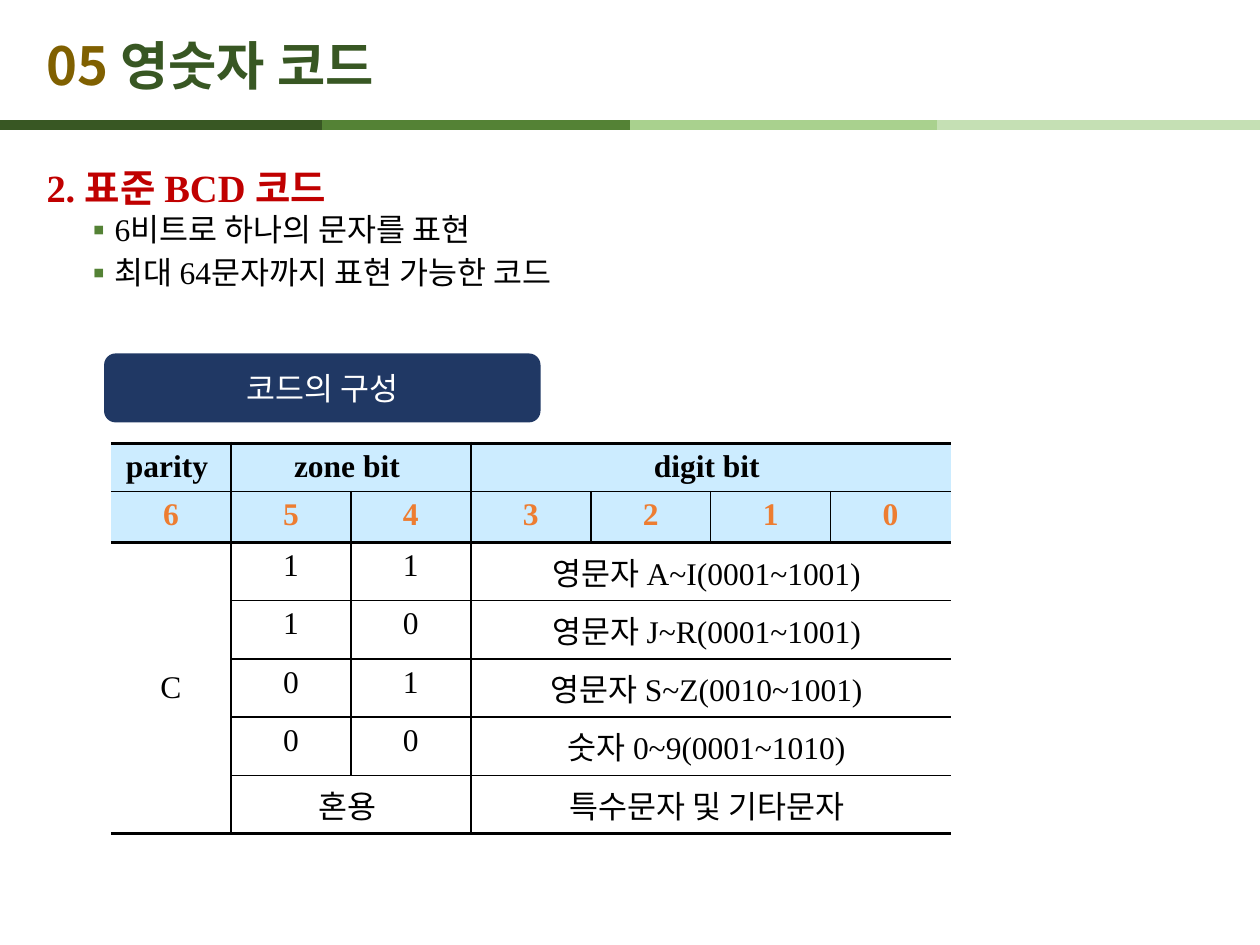
import pptx
import pptx.util
import pptx.dml.color
import pptx.enum.shapes
import pptx.enum.text
import pptx.oxml.ns
from lxml import etree

Pt = pptx.util.Pt
RGBColor = pptx.dml.color.RGBColor
qn = pptx.oxml.ns.qn
ALIGN = pptx.enum.text.PP_ALIGN
ANCHOR = pptx.enum.text.MSO_ANCHOR

BLACK = RGBColor(0, 0, 0)
WHITE = RGBColor(255, 255, 255)
GOLD = RGBColor(0x80, 0x60, 0x00)
DARK_GREEN = RGBColor(0x38, 0x57, 0x23)
GREEN = RGBColor(0x54, 0x82, 0x35)
LIGHT_GREEN = RGBColor(0xA9, 0xD1, 0x8E)
PALE_GREEN = RGBColor(0xC5, 0xE0, 0xB4)
RED = RGBColor(0xC0, 0, 0)
NAVY = RGBColor(0x20, 0x38, 0x64)
ORANGE = RGBColor(0xED, 0x7D, 0x31)
HEADER_BLUE = RGBColor(0xCC, 0xEC, 0xFF)
SANS, SERIF = "Noto Sans CJK KR", "Times New Roman"

TITLE = [("05 ", GOLD), ("영숫자 코드", DARK_GREEN)]
HEADING = "2. 표준 BCD 코드"
BULLETS = ["6비트로 하나의 문자를 표현", "최대 64문자까지 표현 가능한 코드"]
LABEL = "코드의 구성"
STRIPES = [(0, DARK_GREEN), (184.3, GREEN), (360, LIGHT_GREEN), (535.7, PALE_GREEN)]
STRIPE_W, STRIPE_Y = 184.3, 71.3

# row, column, row span, column span, text
CELLS = [
    (0, 0, 1, 1, "parity "), (0, 1, 1, 2, "zone bit "), (0, 3, 1, 4, "digit bit "),
    *[(1, c, 1, 1, str(6 - c)) for c in range(7)],
    (2, 0, 5, 1, "C"),
    (2, 1, 1, 1, "1"), (2, 2, 1, 1, "1"), (2, 3, 1, 4, "영문자 A~I(0001~1001) "),
    (3, 1, 1, 1, "1"), (3, 2, 1, 1, "0"), (3, 3, 1, 4, "영문자 J~R(0001~1001) "),
    (4, 1, 1, 1, "0"), (4, 2, 1, 1, "1"), (4, 3, 1, 4, "영문자 S~Z(0010~1001) "),
    (5, 1, 1, 1, "0"), (5, 2, 1, 1, "0"), (5, 3, 1, 4, "숫자 0~9(0001~1010) "),
    (6, 1, 1, 2, "혼용 "), (6, 3, 1, 4, "특수문자 및 기타문자 "),
]
ROW_HEIGHTS = [27.5, 29] + [33.3] * 5
COLS, COL_W = 7, 68.57
HEADER_ROWS = 2
THIN, THICK = 1, 2.25


def add_run(p, text, size, font, color, bold=False):
    r = p.add_run()
    r.text = text
    r.font.size, r.font.name, r.font.bold = Pt(size), font, bold
    r.font.color.rgb = color
    etree.SubElement(r._r.get_or_add_rPr(), qn("a:ea")).set("typeface", SANS)


def place(sp, left, top, width, height):
    sp.left, sp.top, sp.width, sp.height = Pt(left), Pt(top), Pt(width), Pt(height)


def set_bullet(p, char=None, color=None, left=0, indent=0):
    pPr = p._p.get_or_add_pPr()
    pPr.set("marL", str(Pt(left)))
    pPr.set("indent", str(Pt(indent)))
    if char is None:
        etree.SubElement(pPr, qn("a:buNone"))
        return
    clr = etree.SubElement(pPr, qn("a:buClr"))
    etree.SubElement(clr, qn("a:srgbClr")).set("val", str(color))
    etree.SubElement(pPr, qn("a:buFont")).set("typeface", SANS)
    etree.SubElement(pPr, qn("a:buChar")).set("char", char)


def set_borders(cell, widths):
    tcPr = cell._tc.get_or_add_tcPr()
    for i, (side, width) in enumerate(zip("LRTB", widths)):
        ln = etree.Element(qn("a:ln" + side), w=str(Pt(width)))
        if width:
            fill = etree.SubElement(ln, qn("a:solidFill"))
            etree.SubElement(fill, qn("a:srgbClr")).set("val", str(BLACK))
        else:
            etree.SubElement(ln, qn("a:noFill"))
        tcPr.insert(i, ln)


def row_line(row):
    return THICK if row in (0, HEADER_ROWS, len(ROW_HEIGHTS)) else THIN


def col_line(col):
    return 0 if col in (0, COLS) else THIN


def add_code_table(slide):
    tbl = slide.shapes.add_table(len(ROW_HEIGHTS), COLS, Pt(63.4), Pt(253.4),
                                 Pt(COL_W * COLS), Pt(sum(ROW_HEIGHTS))).table
    tbl.first_row = tbl.horz_banding = False
    for col in tbl.columns:
        col.width = Pt(COL_W)
    for row, height in zip(tbl.rows, ROW_HEIGHTS):
        row.height = Pt(height)
    for r, c, rows, cols, text in CELLS:
        cell = tbl.cell(r, c)
        if rows * cols > 1:
            cell.merge(tbl.cell(r + rows - 1, c + cols - 1))
        widths = col_line(c), col_line(c + cols), row_line(r), row_line(r + rows)
        for i in range(r, r + rows):
            for j in range(c, c + cols):
                part = tbl.cell(i, j)
                if r < HEADER_ROWS:
                    part.fill.solid()
                    part.fill.fore_color.rgb = HEADER_BLUE
                else:
                    part.fill.background()
                set_borders(part, widths)
        cell.vertical_anchor = ANCHOR.MIDDLE if rows > 1 else ANCHOR.TOP
        p = cell.text_frame.paragraphs[0]
        p.alignment = ALIGN.CENTER
        add_run(p, text, 18, SERIF, ORANGE if r == 1 else BLACK, r < HEADER_ROWS)


def main():
    prs = pptx.Presentation()
    prs.slide_width, prs.slide_height = Pt(720), Pt(540)
    slide = prs.slides.add_slide(prs.slide_layouts[1])

    for x, color in STRIPES:
        line = slide.shapes.add_connector(pptx.enum.shapes.MSO_CONNECTOR.STRAIGHT,
                                          Pt(x), Pt(STRIPE_Y), Pt(x + STRIPE_W), Pt(STRIPE_Y))
        line.line.color.rgb, line.line.width = color, Pt(6)
        etree.SubElement(line._element.spPr, qn("a:effectLst"))

    title = slide.shapes.title
    place(title, 19.4, 15.1, 595.4, 43.2)
    title.text_frame.vertical_anchor = ANCHOR.MIDDLE
    p = title.text_frame.paragraphs[0]
    p.alignment = ALIGN.LEFT
    for text, color in TITLE:
        add_run(p, text, 30, SANS, color, True)

    body = slide.placeholders[1]
    place(body, 19.4, 77, 680.4, 430.6)
    tf = body.text_frame
    p = tf.paragraphs[0]
    p.line_spacing, p.space_before = 1.5, Pt(0)
    set_bullet(p)
    add_run(p, HEADING, 22, SERIF, RED, True)
    for text in BULLETS:
        p = tf.add_paragraph()
        p.level = 1
        p.space_before, p.space_after = Pt(0), Pt(3)
        set_bullet(p, "▪", GREEN, 35.3, -14.4)
        add_run(p, text, 18, SERIF, BLACK)

    add_code_table(slide)

    label = slide.shapes.add_shape(pptx.enum.shapes.MSO_SHAPE.ROUNDED_RECTANGLE,
                                   Pt(59.5), Pt(202), Pt(249.4), Pt(39.4))
    label.shadow.inherit = False
    label.fill.solid()
    label.fill.fore_color.rgb = NAVY
    label.line.fill.background()
    label.text_frame.vertical_anchor = ANCHOR.MIDDLE
    p = label.text_frame.paragraphs[0]
    p.alignment = ALIGN.CENTER
    add_run(p, LABEL, 18, SANS, WHITE)

    prs.save("out.pptx")


if __name__ == "__main__":
    main()
